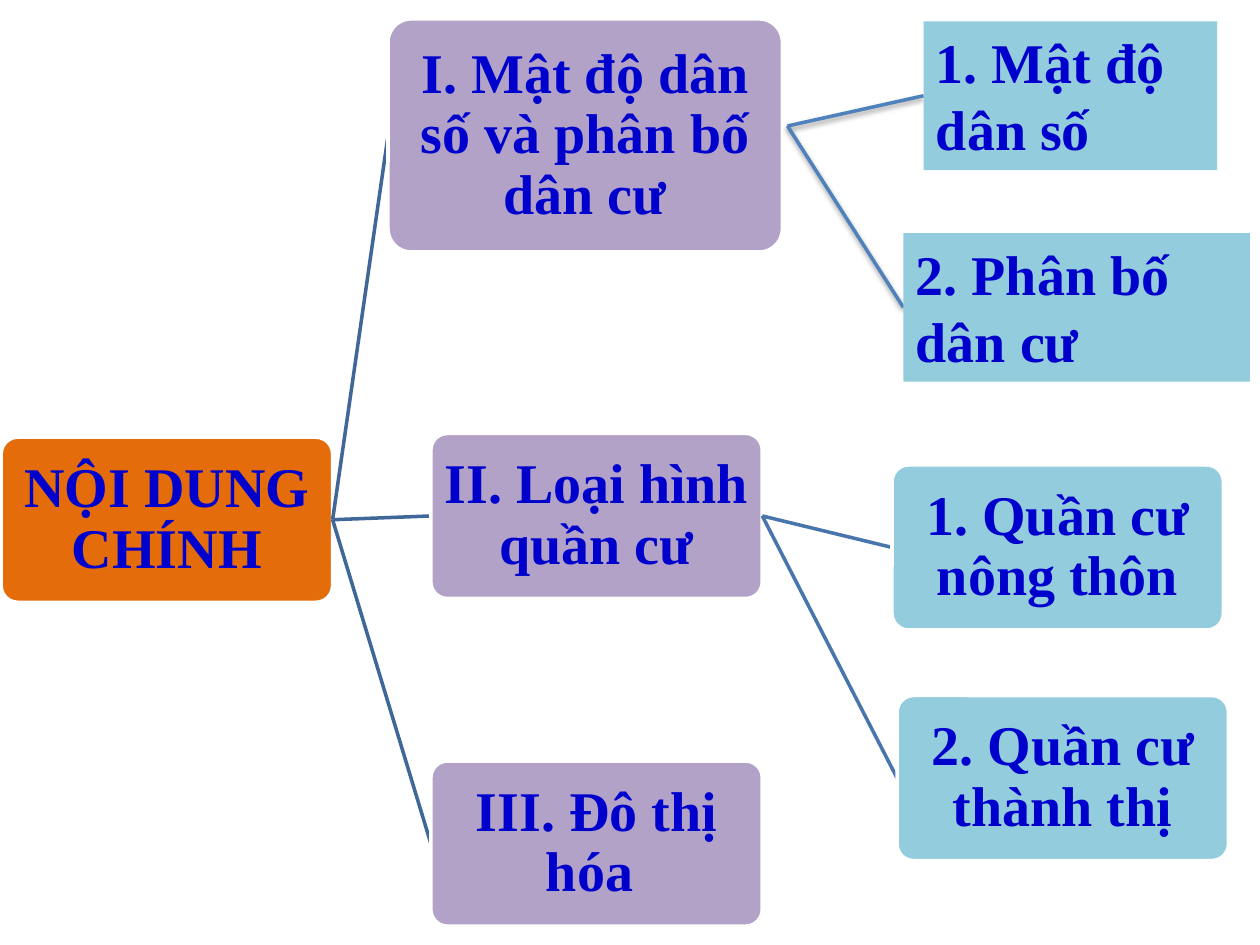
from pptx import Presentation
from pptx.dml.color import RGBColor
from pptx.enum.shapes import MSO_CONNECTOR, MSO_SHAPE
from pptx.enum.text import MSO_ANCHOR, PP_ALIGN
from pptx.oxml.ns import qn
from pptx.util import Inches, Pt
from lxml.etree import SubElement

ORANGE, PURPLE, AQUA = "E46C0A", "B3A2C7", "93CDDD"
TEXT_BLUE, WHITE = "0000CC", "FFFFFF"

deck = Presentation()
deck.slide_width, deck.slide_height = Inches(10), Inches(7.5)
page = deck.slides.add_slide(deck.slide_layouts[6])
column, row = deck.slide_width / 10, deck.slide_height / 7.5


def paint(format_part, color):
    if hasattr(format_part, "solid"):
        format_part.solid()
        format_part.fore_color.rgb = RGBColor.from_string(color)
    else:
        format_part.color.rgb = RGBColor.from_string(color)


def add_box(kind, left, top, width, height, fill, text):
    box = page.shapes.add_shape(
        kind, int(left * column), int(top * row), int(width * column), int(height * row))
    box.shadow.inherit = False
    paint(box.fill, fill)
    box.text_frame.word_wrap = True
    box.text_frame.text = text
    font = box.text_frame.paragraphs[0].runs[0].font
    font.name, font.size, font.bold = "Times New Roman", Pt(32), True
    paint(font, TEXT_BLUE)
    return box


nodes = [
    ("root", None, 0.01, 3.47, 2.63, 1.31, ORANGE, "NỘI DUNG CHÍNH"),
    ("settlement", "root", 3.42, 3.44, 2.63, 1.31, PURPLE, "II. Loại hình quần cư"),
    ("rural", "settlement", 7.08, 3.69, 2.63, 1.31, AQUA, "1. Quần cư nông thôn"),
    ("urban", "settlement", 7.12, 5.52, 2.63, 1.31, AQUA, "2. Quần cư thành thị"),
    ("population", "root", 3.08, 0.15, 3.13, 1.85, PURPLE, "I. Mật độ dân số và phân bố dân cư"),
    ("urbanisation", "root", 3.42, 6.04, 2.63, 1.31, PURPLE, "III. Đô thị hóa "),
]
link_colors = {"root": "3F6797", "settlement": "4875AC"}
boxes = {}

for name, parent, left, top, width, height, fill, text in nodes:
    if parent:
        source = boxes[parent]
        link = page.shapes.add_connector(
            MSO_CONNECTOR.STRAIGHT,
            source.left + source.width, source.top + source.height // 2,
            int(left * column), int((top + height / 2) * row))
        paint(link.line, link_colors[parent])
        link.line.width = Pt(2)
        SubElement(link._element.spPr, qn("a:effectLst"))
    box = add_box(MSO_SHAPE.ROUNDED_RECTANGLE, left, top, width, height, fill, text)
    box.adjustments[0] = 0.1
    paint(box.line, WHITE)
    box.line.width = Pt(2)
    frame = box.text_frame
    frame.margin_left = frame.margin_right = Inches(0.02)
    frame.margin_top = frame.margin_bottom = Inches(0.02)
    frame.vertical_anchor = MSO_ANCHOR.MIDDLE
    para = frame.paragraphs[0]
    para.alignment = PP_ALIGN.CENTER
    para.line_spacing = 0.9
    boxes[name] = box

topics = [
    (7.33, 0.17, 2.33, "1. Mật độ dân số"),
    (7.17, 1.85, 2.75, "2. Phân bố dân cư"),
]
topic_height = 1.18

for left, top, width, text in topics:
    link = page.shapes.add_connector(
        MSO_CONNECTOR.STRAIGHT, int(6.25 * column), int(1 * row),
        int(left * column), int((top + topic_height / 2) * row))
    paint(link.line, "4F81BD")
    link.line.width = Pt(2)
    box = add_box(MSO_SHAPE.RECTANGLE, left, top, width, topic_height, AQUA, text)
    box.line.fill.background()
    box.text_frame.vertical_anchor = MSO_ANCHOR.TOP
    box.text_frame.paragraphs[0].alignment = PP_ALIGN.LEFT

deck.save("out.pptx")
